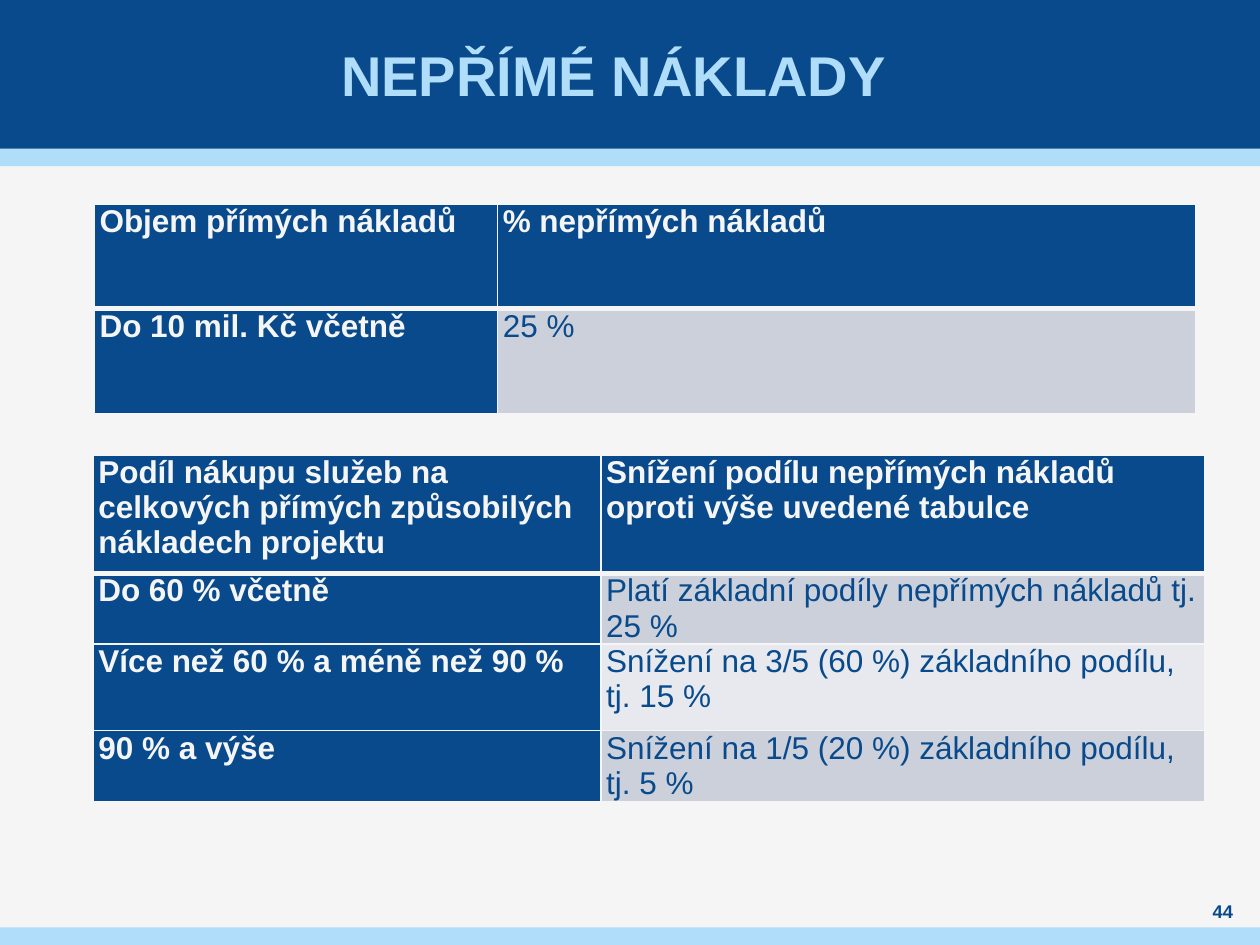
from dataclasses import dataclass

from lxml.etree import SubElement
from pptx import Presentation
from pptx.dml.color import RGBColor
from pptx.enum.shapes import MSO_SHAPE
from pptx.enum.text import MSO_ANCHOR, MSO_AUTO_SIZE, PP_ALIGN
from pptx.oxml.ns import qn
from pptx.slide import Slide
from pptx.table import _Cell
from pptx.text.text import TextFrame, _Paragraph
from pptx.util import Inches, Pt


@dataclass(frozen=True)
class Theme:
    navy: str = "084A8B"
    sky: str = "AFDDFA"
    paper: str = "F5F5F5"
    odd_row: str = "CCD0DA"
    even_row: str = "E7E9EE"
    font: str = "Arial"
    title_size: float = 32
    table_size: float = 18
    number_size: float = 10.5
    thin_line: float = 1
    header_line: float = 3


@dataclass(frozen=True)
class Band:
    top: float
    height: float
    color: str


@dataclass(frozen=True)
class RateTable:
    left: float
    top: float
    column_widths: tuple[float, ...]
    row_heights: tuple[float, ...]
    rows: tuple[tuple[str, str], ...]


THEME = Theme()

BANDS = (
    Band(1.18, 0.14, THEME.sky),
    Band(0, 1.18, THEME.navy),
    Band(7.36, 0.14, THEME.sky),
)

BASE_RATES = RateTable(
    0.75, 1.62, (3.2, 5.54), (0.83, 0.83),
    (
        ("Objem přímých nákladů", "% nepřímých nákladů"),
        ("Do 10 mil. Kč včetně", "25 %"),
    ),
)

REDUCTIONS = RateTable(
    0.74, 3.61, (4.03, 4.79), (0.94, 0.45, 0.69, 0.47),
    (
        ("Podíl nákupu služeb na celkových přímých způsobilých nákladech projektu",
         "Snížení podílu nepřímých nákladů oproti výše uvedené tabulce"),
        ("Do 60 % včetně", "Platí základní podíly nepřímých nákladů tj. 25 %"),
        ("Více než 60 % a méně než 90 %", "Snížení na 3/5 (60 %) základního podílu, tj. 15 %"),
        ("90 % a výše", "Snížení na 1/5 (20 %) základního podílu, tj. 5 %"),
    ),
)


def rgb(color: str) -> RGBColor:
    return RGBColor.from_string(color)


def format_runs(paragraph: _Paragraph, size: float, color: str, bold: bool) -> None:
    for run in paragraph.runs:
        run.font.name = THEME.font
        run.font.size = Pt(size)
        run.font.bold = bold
        run.font.color.rgb = rgb(color)


def set_centered(frame: TextFrame, text: str, size: float, color: str,
                 left: float = 0, right: float = 0) -> None:
    frame.text = text
    frame.word_wrap = True
    frame.auto_size = MSO_AUTO_SIZE.NONE
    frame.vertical_anchor = MSO_ANCHOR.MIDDLE
    frame.margin_left, frame.margin_right = Inches(left), Inches(right)
    frame.margin_top = frame.margin_bottom = 0
    frame.paragraphs[0].alignment = PP_ALIGN.CENTER
    format_runs(frame.paragraphs[0], size, color, True)


def draw_band(slide: Slide, band: Band) -> None:
    stripe = slide.shapes.add_shape(
        MSO_SHAPE.RECTANGLE, 0, Inches(band.top), Inches(10), Inches(band.height))
    stripe.shadow.inherit = False
    stripe.fill.solid()
    stripe.fill.fore_color.rgb = rgb(band.color)
    stripe.line.fill.background()


def draw_title(slide: Slide, text: str) -> None:
    title = slide.shapes.title
    slide.shapes.element.append(title.element)
    title.left, title.top = Inches(0.39), 0
    title.width, title.height = Inches(9.21), Inches(1.18)
    set_centered(title.text_frame, text, THEME.title_size, THEME.sky, 0.04, 0.29)


def draw_page_number(slide: Slide, number: str) -> None:
    page_number = slide.shapes.add_textbox(
        Inches(9.45), Inches(7.13), Inches(0.51), Inches(0.2))
    set_centered(page_number.text_frame, number, THEME.number_size, THEME.navy)


def set_borders(cell: _Cell, top: float, bottom: float) -> None:
    properties = cell._tc.get_or_add_tcPr()
    widths = {"lnL": THEME.thin_line, "lnR": THEME.thin_line, "lnT": top, "lnB": bottom}
    for side, width in widths.items():
        border = SubElement(properties, qn(f"a:{side}"), w=str(Pt(width)))
        fill = SubElement(border, qn("a:solidFill"))
        SubElement(fill, qn("a:srgbClr"), val=THEME.paper)


def fill_cell(cell: _Cell, text: str, row: int, column: int) -> None:
    is_heading = row == 0 or column == 0
    body_fill = THEME.odd_row if row % 2 else THEME.even_row
    set_borders(
        cell,
        THEME.header_line if row == 1 else THEME.thin_line,
        THEME.header_line if row == 0 else THEME.thin_line,
    )
    cell.fill.solid()
    cell.fill.fore_color.rgb = rgb(THEME.navy if is_heading else body_fill)
    cell.margin_left = cell.margin_right = cell.margin_top = cell.margin_bottom = 0
    cell.text_frame.text = text
    paragraph = cell.text_frame.paragraphs[0]
    paragraph.space_after = Pt(3)
    paragraph._p.get_or_add_pPr().set("marL", str(Inches(0.04)))
    format_runs(paragraph, THEME.table_size,
                THEME.paper if is_heading else THEME.navy, is_heading)


def draw_table(slide: Slide, rates: RateTable) -> None:
    table = slide.shapes.add_table(
        len(rates.row_heights), len(rates.column_widths),
        Inches(rates.left), Inches(rates.top),
        Inches(sum(rates.column_widths)), Inches(sum(rates.row_heights))).table
    for column, width in zip(table.columns, rates.column_widths):
        column.width = Inches(width)
    for row, height in zip(table.rows, rates.row_heights):
        row.height = Inches(height)
    for row_index, texts in enumerate(rates.rows):
        for column_index, text in enumerate(texts):
            fill_cell(table.cell(row_index, column_index), text, row_index, column_index)


def main() -> None:
    presentation = Presentation()
    presentation.slide_width = Inches(10)
    presentation.slide_height = Inches(7.5)
    slide = presentation.slides.add_slide(presentation.slide_layouts[5])
    slide.background.fill.solid()
    slide.background.fill.fore_color.rgb = rgb(THEME.paper)
    for band in BANDS:
        draw_band(slide, band)
    draw_title(slide, "NEPŘÍMÉ NÁKLADY")
    draw_table(slide, BASE_RATES)
    draw_page_number(slide, "44")
    draw_table(slide, REDUCTIONS)
    presentation.save("out.pptx")


if __name__ == "__main__":
    main()
